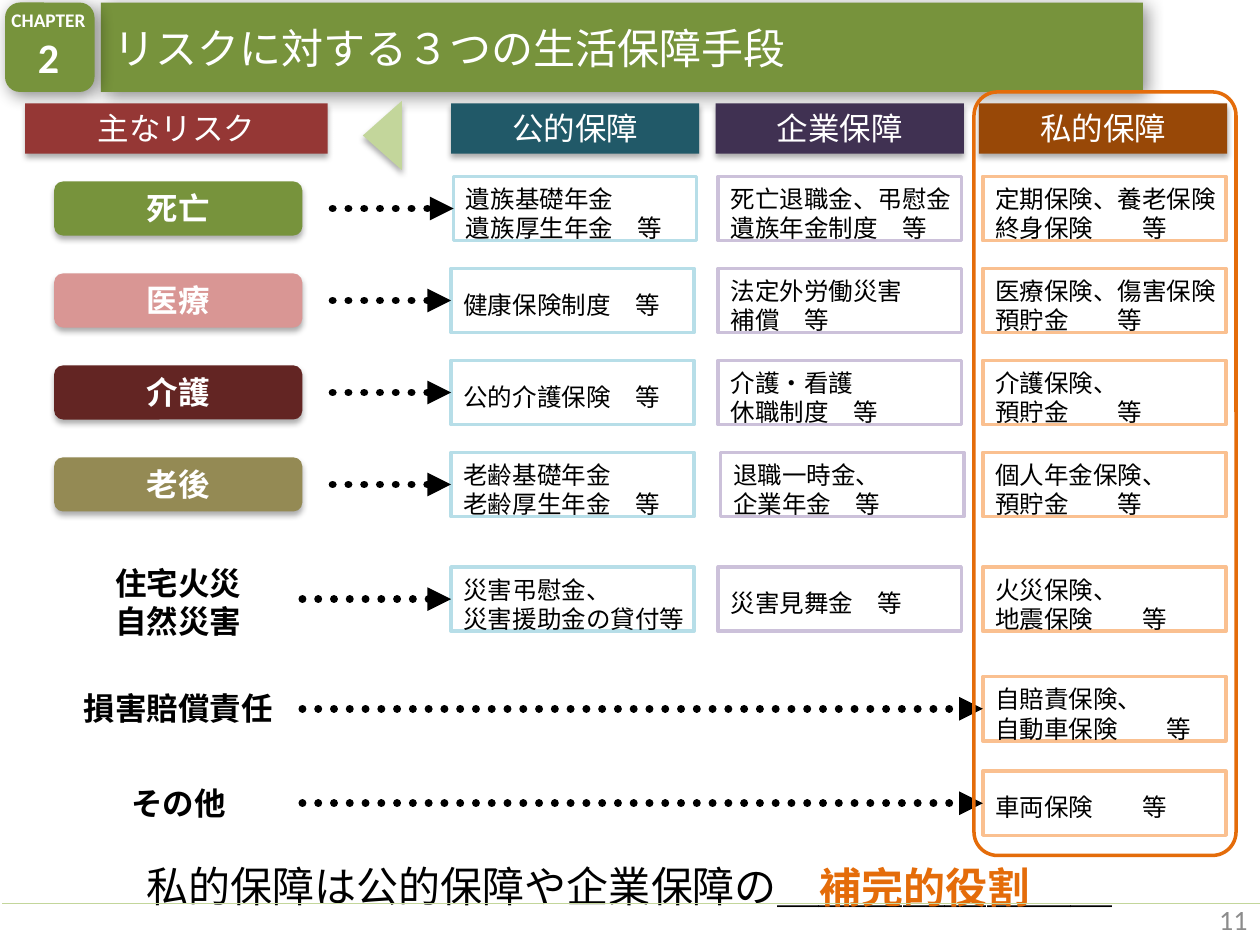
from lxml.etree import SubElement
from pptx import Presentation
from pptx.dml.color import RGBColor
from pptx.enum.dml import MSO_LINE
from pptx.enum.shapes import MSO_CONNECTOR, MSO_SHAPE
from pptx.enum.text import MSO_ANCHOR, MSO_AUTO_SIZE, PP_ALIGN
from pptx.oxml.ns import qn
from pptx.util import Pt

PX = 9144  # EMU per px, 100 px to the inch

WHITE = RGBColor(0xFF, 0xFF, 0xFF)
BLACK = RGBColor(0x00, 0x00, 0x00)
GRAY = RGBColor(0x8C, 0x8C, 0x8C)
GREEN = RGBColor(0x77, 0x93, 0x3C)
PALE_GREEN = RGBColor(0xC3, 0xD6, 0x9B)
RED = RGBColor(0x95, 0x37, 0x35)
PINK = RGBColor(0xD9, 0x96, 0x94)
MAROON = RGBColor(0x63, 0x25, 0x23)
KHAKI = RGBColor(0x94, 0x8A, 0x54)
TEAL = RGBColor(0x21, 0x59, 0x68)
PURPLE = RGBColor(0x40, 0x31, 0x52)
BROWN = RGBColor(0x98, 0x48, 0x07)
PALE_BLUE = RGBColor(0xB7, 0xDE, 0xE8)
PALE_PURPLE = RGBColor(0xCC, 0xC1, 0xDA)
PALE_ORANGE = RGBColor(0xFA, 0xC0, 0x90)
ORANGE = RGBColor(0xE4, 0x6C, 0x0A)

# Shadows: opacity %, blur pt, distance pt, angle
SOFT = (32, 3.5, 2.2, 90)
STRONG = (45, 10, 3, 45)

LEFT, CENTER, RIGHT = PP_ALIGN.LEFT, PP_ALIGN.CENTER, PP_ALIGN.RIGHT
TOP, MIDDLE = MSO_ANCHOR.TOP, MSO_ANCHOR.MIDDLE
GROW = MSO_AUTO_SIZE.SHAPE_TO_FIT_TEXT


class Deck:
    """Holds the text style and the current slide."""

    def __init__(self, slide, font="Calibri"):
        self.s = slide
        self.font = font

    def label(self, sp, lines, sizes, color=BLACK, bold=False, align=LEFT, anchor=TOP,
              insets=(10, 5, 10, 5), wrap=True, fit=MSO_AUTO_SIZE.NONE, font=None):
        tf = sp.text_frame
        sides = ("margin_left", "margin_top", "margin_right", "margin_bottom")
        frame = {"word_wrap": wrap, "auto_size": fit, "vertical_anchor": anchor}
        frame.update(zip(sides, (v * PX for v in insets)))
        for name, value in frame.items():
            setattr(tf, name, value)
        for i, line in enumerate(lines):
            p = tf.paragraphs[0] if i == 0 else tf.add_paragraph()
            p.alignment = align
            r = p.add_run()
            r.text = line
            style = {"name": font or self.font, "size": Pt(sizes[min(i, len(sizes) - 1)]),
                     "bold": bold}
            for name, value in style.items():
                setattr(r.font, name, value)
            r.font.color.rgb = color

    def paint(self, sp, fill=None, line=None, shadow=None):
        if fill is None:
            sp.fill.background()
        else:
            sp.fill.solid()
            sp.fill.fore_color.rgb = fill
        if line is None:
            sp.line.fill.background()
        else:
            sp.line.color.rgb = line
            sp.line.width = Pt(2)
        sp.shadow.inherit = False
        if shadow:
            alpha, blur, dist, angle = shadow
            effects = sp.element.spPr.find(qn("a:effectLst"))
            outer = SubElement(effects, qn("a:outerShdw"), blurRad=str(Pt(blur)),
                               dist=str(Pt(dist)), dir=str(angle * 60000), rotWithShape="0")
            tint = SubElement(outer, qn("a:srgbClr"), val=str(BLACK))
            SubElement(tint, qn("a:alpha"), val=str(alpha * 1000))

    def title(self, box, text, fill):
        sp = self.s.shapes.title
        for name, value in zip(("left", "top", "width", "height"), box):
            setattr(sp, name, value * PX)
        self.paint(sp, fill, shadow=STRONG)
        self.label(sp, [text], [24], WHITE, anchor=MIDDLE)

    def shape(self, kind, box, fill=None, line=None, shadow=None):
        sp = self.s.shapes.add_shape(kind, *(v * PX for v in box))
        self.paint(sp, fill, line, shadow)
        return sp

    def text(self, box, lines, sizes, **style):
        sp = self.s.shapes.add_textbox(*(v * PX for v in box))
        self.label(sp, lines, sizes, **style)
        return sp

    def connector(self, x1, y1, x2, y2, color, width):
        cx = self.s.shapes.add_connector(MSO_CONNECTOR.STRAIGHT, x1, y1, x2, y2)
        cx.line.color.rgb = color
        cx.line.width = Pt(width)
        SubElement(cx.element.spPr, qn("a:effectLst"))
        return cx

    def arrow(self, x, target, source=None):
        y = target.top + target.height // 2
        cx = self.connector(x * PX, y, target.left, y, BLACK, 4.5)
        cx.line.dash_style = MSO_LINE.ROUND_DOT
        ln = cx.element.spPr.find(qn("a:ln"))
        ln.set("cap", "rnd")
        SubElement(ln, qn("a:tailEnd"), type="triangle")
        if source is not None:
            cx.begin_connect(source, 3)
        cx.end_connect(target, 1)


HEADERS = [  # left, width, text, fill
    (20, 240, "主なリスク", RED),
    (358, 197, "公的保障", TEAL),
    (568, 197, "企業保障", PURPLE),
    (777, 197, "私的保障", BROWN),
]
COLUMNS = [(358, PALE_BLUE), (570, PALE_PURPLE), (780, PALE_ORANGE)]
BOX_W, BOX_H = 193, 51
LABEL_X, LABEL_W = 43, 197
ROWS = [  # top, label lines, label fill, one cell for each column
    (140, ["死亡"], GREEN, [["遺族基礎年金", "遺族厚生年金　等"],
                          ["死亡退職金、弔慰金", "遺族年金制度　等"],
                          ["定期保険、養老保険", "終身保険　　等"]]),
    (213, ["医療"], PINK, [["健康保険制度　等"],
                         ["法定外労働災害", "補償　等"],
                         ["医療保険、傷害保険", "預貯金　　等"]]),
    (286, ["介護"], MAROON, [["公的介護保険　等"],
                           ["介護・看護", "休職制度　等"],
                           ["介護保険、", "預貯金　　等"]]),
    (359, ["老後"], KHAKI, [["老齢基礎年金", "老齢厚生年金　等"],
                          ["退職一時金、", "企業年金　等"],
                          ["個人年金保険、", "預貯金　　等"]]),
    (450, ["住宅火災", "自然災害"], None, [["災害弔慰金、", "災害援助金の貸付等"],
                                   ["災害見舞金　等"],
                                   ["火災保険、", "地震保険　　等"]]),
    (537, ["損害賠償責任"], None, [None, None, ["自賠責保険、", "自動車保険　　等"]]),
    (612, ["その他"], None, [None, None, ["車両保険　　等"]]),
]
NUDGE = {(0, 0): 2, (3, 1): 2}  # (row, column): shift to the right


def main():
    prs = Presentation()
    prs.slide_width, prs.slide_height = 1000 * PX, 750 * PX
    deck = Deck(prs.slides.add_slide(prs.slide_layouts[5]))

    # Title bar and chapter badge
    deck.title((80, 2, 827, 71), "リスクに対する３つの生活保障手段", GREEN)
    badge = deck.shape(MSO_SHAPE.ROUNDED_RECTANGLE, (4, 2, 71, 71), GREEN, shadow=STRONG)
    deck.label(badge, ["CHAPTER", "2"], [11, 24], WHITE, True, CENTER, MIDDLE,
               (8, 4, 10, 8), wrap=False)

    # Column headers and the pointer between them
    for x, w, text, fill in HEADERS:
        sp = deck.shape(MSO_SHAPE.RECTANGLE, (x, 82, w, 40), fill, shadow=SOFT)
        deck.label(sp, [text], [18], WHITE, align=CENTER, fit=GROW)
    pointer = deck.shape(MSO_SHAPE.ISOSCELES_TRIANGLE, (276, 92, 55, 31), PALE_GREEN,
                         shadow=SOFT)
    pointer.rotation = 270

    # Risk rows: label, cover boxes, dotted arrow to the first box
    for row, (top, names, fill, cells) in enumerate(ROWS):
        style = {"bold": True, "align": CENTER, "anchor": MIDDLE, "fit": GROW,
                 "insets": (10, 4, 10, 5 if len(names) == 1 else 0)}
        h = 43 if fill else 39 if len(names) == 1 else 65
        risk_box = (LABEL_X, top + (BOX_H - h) // 2, LABEL_W, h)
        if fill:
            risk = deck.shape(MSO_SHAPE.ROUNDED_RECTANGLE, risk_box, fill, shadow=SOFT)
            deck.label(risk, names, [18], color=WHITE, **style)
        else:
            risk = deck.text(risk_box, names, [18], **style)

        boxes = []
        for col, ((x, line), lines) in enumerate(zip(COLUMNS, cells)):
            if lines:
                left = x + NUDGE.get((row, col), 0)
                sp = deck.shape(MSO_SHAPE.RECTANGLE, (left, top, BOX_W, BOX_H), line=line)
                deck.label(sp, lines, [14], anchor=MIDDLE if len(lines) == 1 else TOP,
                           insets=(10, 6, 10, 0), wrap=False)
                boxes.append(sp)
        if fill:
            deck.arrow(264, boxes[0])
        else:
            deck.arrow(LABEL_X + LABEL_W, boxes[0], risk)

    # Conclusion
    deck.text((0, 678, 1000, 51), ["私的保障は公的保障や企業保障の＿＿＿＿＿＿＿＿"], [24],
              align=CENTER, fit=GROW)
    deck.text((641, 679, 197, 51), ["補完的役割"], [24], color=ORANGE, bold=True, fit=GROW,
              font="Noto Sans CJK JP")

    # Footer rule and page number
    deck.connector(2 * PX, 717 * PX, 1000 * PX, 717 * PX, PALE_GREEN, 0.75)
    deck.text((767, 710, 233, 40), ["11"], [16], color=GRAY, align=RIGHT, anchor=MIDDLE)

    # Frame around the private cover column
    frame = deck.shape(MSO_SHAPE.ROUNDED_RECTANGLE, (773, 73, 208, 606), line=ORANGE)
    frame.adjustments[0] = 0.09

    prs.save("out.pptx")


if __name__ == "__main__":
    main()
